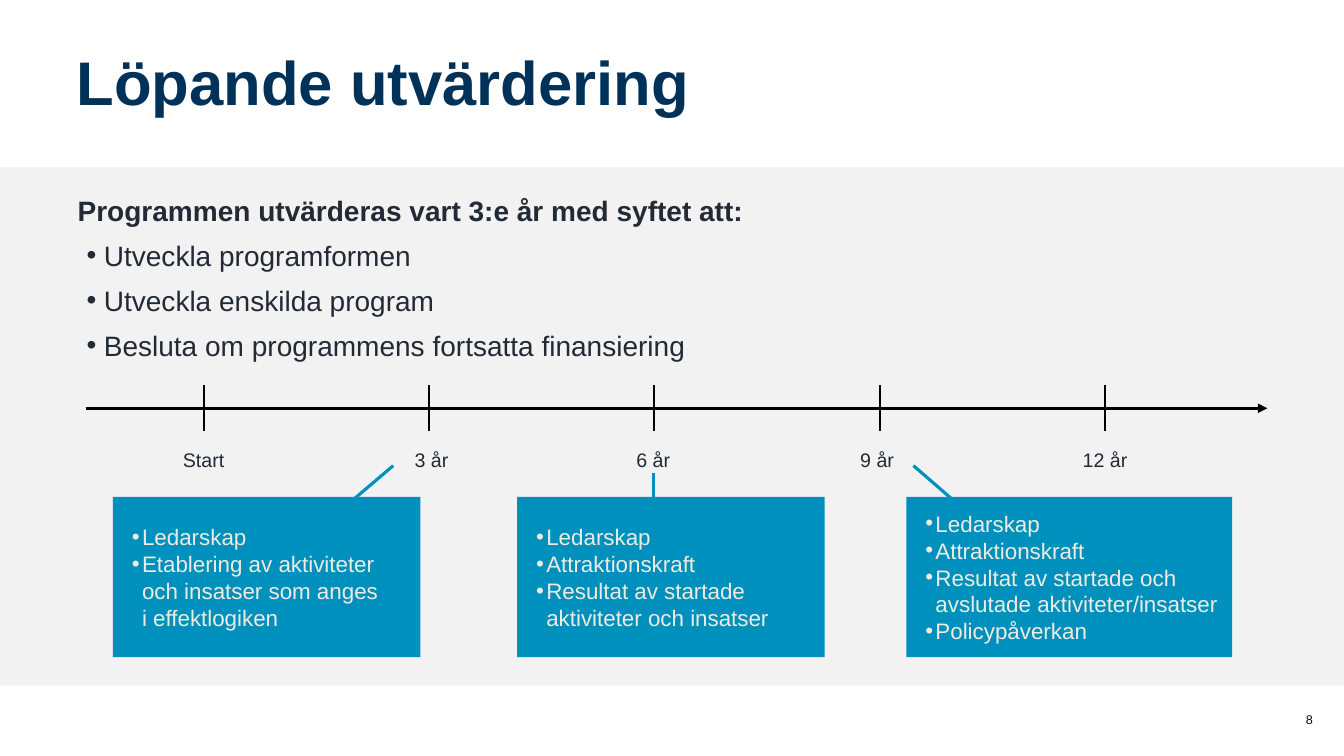
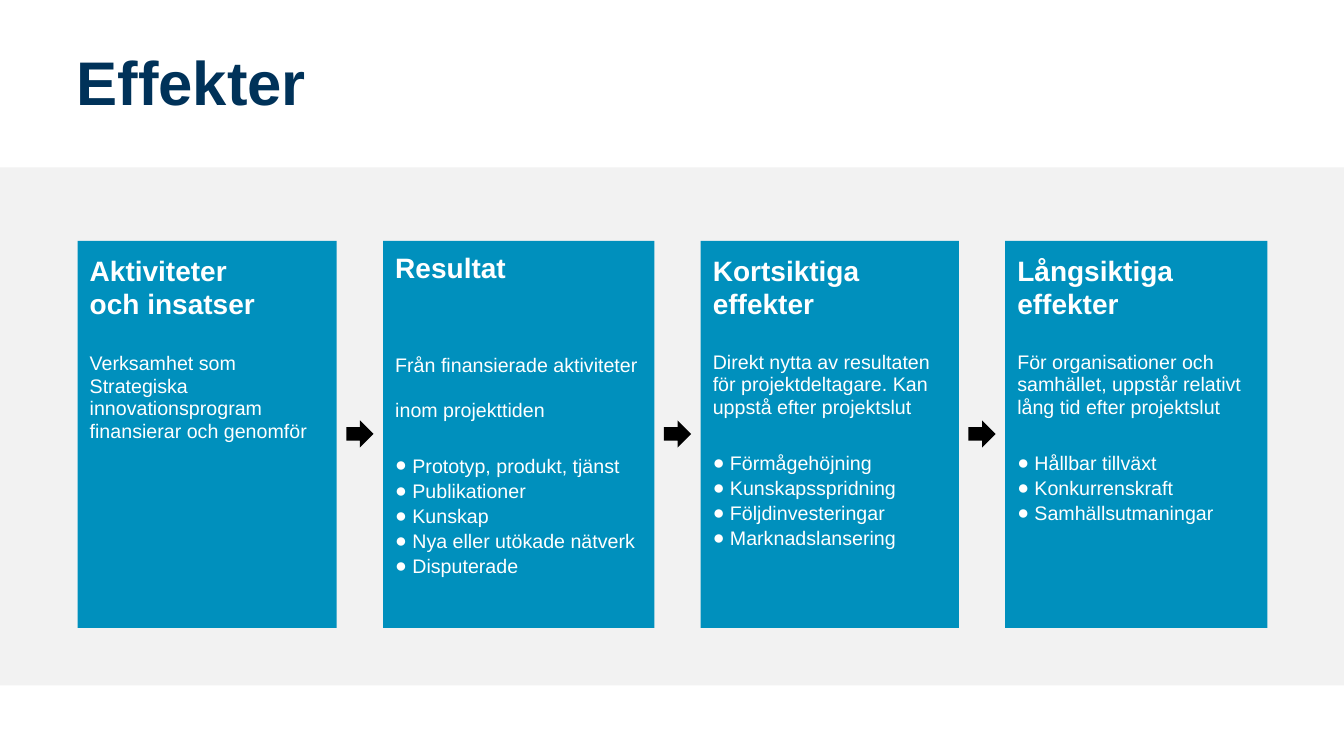
from lxml.etree import SubElement
from pptx import Presentation
from pptx.dml.color import RGBColor
from pptx.enum.shapes import MSO_CONNECTOR as Connector
from pptx.enum.shapes import MSO_SHAPE as Preset
from pptx.enum.shapes import PP_PLACEHOLDER as Holder
from pptx.enum.text import MSO_ANCHOR as Anchor
from pptx.enum.text import MSO_AUTO_SIZE as AutoSize
from pptx.enum.text import PP_ALIGN as Align
from pptx.oxml.ns import qn
from pptx.util import Inches, Pt

# Shared colours and formats
NAVY, BLUE, GREY = "003259", "0090BD", "F2F2F2"
INK, CREAM, WHITE, BLACK = "222A35", "EEECE1", "FFFFFF", "000000"
NO_MARGINS = dict.fromkeys(
    ("margin_left", "margin_top", "margin_right", "margin_bottom"), 0)
CARD_MARGINS = {"margin_left": Inches(0.12), "margin_top": Inches(0.12),
                "margin_right": Inches(0.12), "margin_bottom": Inches(0.08)}

# Slide 1: the timeline and what is evaluated at each stage
PURPOSES = ["Utveckla programformen", "Utveckla enskilda program",
            "Besluta om programmens fortsatta finansiering"]
MILESTONES = [("Start", 2.02), ("3 år", 4.28), ("6 år", 6.48),
              ("9 år", 8.7), ("12 år", 10.96)]
FIRST_TICK, LAST_TICK, AXIS_Y, TICK_REACH = 2.02, 10.96, 4.05, 0.23
# left, width, pointer ends, topics
EVALUATIONS = [
    (1.12, 3.05, (3.23, 5.19, 3.9, 4.62),
     ["Ledarskap",
      "Etablering av aktiviteter och insatser som anges\vi effektlogiken"]),
    (5.13, 3.05, (6.48, 5.58, 6.48, 4.69),
     ["Ledarskap", "Attraktionskraft",
      "Resultat av startade aktiviteter och insatser"]),
    (8.99, 3.23, (9.74, 5.21, 9.06, 4.62),
     ["Ledarskap", "Attraktionskraft",
      "Resultat av startade och avslutade aktiviteter/insatser",
      "Policypåverkan"]),
]

# Slide 2: width, heading, heading line and gap in points, description, examples
EFFECT_STEPS = [
    (2.57, "Aktiviteter\voch insatser", 24, 23,
     ["Verksamhet som Strategiska innovationsprogram finansierar och genomför"],
     []),
    (2.69, "Resultat", 22, 50,
     ["Från finansierade aktiviteter", "inom projekttiden"],
     ["Prototyp, produkt, tjänst", "Publikationer", "Kunskap",
      "Nya eller utökade nätverk", "Disputerade"]),
    (2.56, "Kortsiktiga\veffekter", 24, 22,
     ["Direkt nytta av resultaten för projektdeltagare. "
      "Kan uppstå efter projektslut"],
     ["Förmågehöjning", "Kunskapsspridning", "Följdinvesteringar",
      "Marknadslansering"]),
    (2.6, "Långsiktiga\veffekter", 24, 22,
     ["För organisationer och samhället, uppstår relativt lång tid "
      "efter projektslut"],
     ["Hållbar tillväxt", "Konkurrenskraft", "Samhällsutmaningar"]),
]
CARDS_LEFT, CARDS_TOP, CARD_HEIGHT, CARD_GAP = 0.77, 2.39, 3.84, 0.46
ARROW_SIZE = 0.27


def apply(target, formats):
    for name, value in formats.items():
        setattr(target, name, value)


def paint(fill, color):
    fill.solid()
    fill.fore_color.rgb = RGBColor.from_string(color)


def place(shape, left, top, width, height):
    apply(shape, {"left": Inches(left), "top": Inches(top),
                  "width": Inches(width), "height": Inches(height)})


def set_bullet(paragraph, mark, indent, hanging):
    """Set the bullet and indents; without a mark the bullet is off."""
    properties = paragraph._p.get_or_add_pPr()
    properties.set("marL", str(Inches(indent)))
    properties.set("indent", str(-Inches(hanging)))
    if mark:
        SubElement(properties, qn("a:buFont"), typeface="Arial")
        SubElement(properties, qn("a:buChar"), char=mark)
    else:
        SubElement(properties, qn("a:buNone"))


def add_text(frame, text, size, color, bold=False, bullet=(None, 0, 0),
             align=Align.LEFT, line=1.0, after=0):
    """Fill the empty first paragraph of a frame, or add another one."""
    paragraph = frame.paragraphs[0]
    if paragraph.runs:
        paragraph = frame.add_paragraph()
    paragraph.text = text
    set_bullet(paragraph, *bullet)
    apply(paragraph, {"alignment": align, "line_spacing": line,
                      "space_before": Pt(0), "space_after": Pt(after)})
    for run in paragraph.runs:
        apply(run.font, {"name": "Arial", "size": Pt(size), "bold": bold})
        paint(run.font.fill, color)


def add_block(slide, preset, box, color):
    block = slide.shapes.add_shape(preset, *map(Inches, box))
    block.shadow.inherit = False
    paint(block.fill, color)
    block.line.fill.background()
    return block


def add_label(slide, box, text, size, color, align, **formats):
    frame = slide.shapes.add_textbox(*map(Inches, box)).text_frame
    apply(frame, {"word_wrap": True, **formats})
    add_text(frame, text, size, color, align=align)


def add_line(slide, ends, color, width, arrow=False):
    line = slide.shapes.add_connector(Connector.STRAIGHT, *map(Inches, ends))
    line.line.width = Pt(width)
    paint(line.line.fill, color)
    properties = line.element.spPr
    if arrow:
        SubElement(properties.find(qn("a:ln")), qn("a:tailEnd"),
                   type="triangle")
    SubElement(properties, qn("a:effectLst"))


def add_titled_slide(deck, layout, title):
    slide = deck.slides.add_slide(deck.slide_layouts[layout])
    add_text(slide.shapes.title.text_frame, title, 44, NAVY, bold=True,
             line=0.9)
    return slide


def style_master(deck, first_slide):
    """Give the master the grey band and the title position."""
    master = deck.slide_master
    band = add_block(first_slide, Preset.RECTANGLE, (0, 1.66, 13.33, 5.14),
                     GREY)
    master.shapes.element.insert(2, band.element)
    title = master.placeholders.get(Holder.TITLE)
    place(title, 0.76, 0.24, 11.18, 1.22)
    apply(title.text_frame, {**NO_MARGINS, "vertical_anchor": Anchor.MIDDLE,
                             "auto_size": AutoSize.NONE})


def add_purposes(slide):
    body = slide.placeholders[1]
    place(body, 0.67, 1.76, 7.48, 1.85)
    frame = body.text_frame
    frame.auto_size = AutoSize.NONE
    add_text(frame, "Programmen utvärderas vart 3:e år med syftet att:", 20,
             INK, bold=True, line=Pt(32))
    for purpose in PURPOSES:
        add_text(frame, purpose, 20, INK, bullet=("•", 0.26, 0.17),
                 line=Pt(32))


def add_timeline(slide):
    add_line(slide, (0.85, AXIS_Y, 12.57, AXIS_Y), BLACK, 2.25, arrow=True)
    step = (LAST_TICK - FIRST_TICK) / (len(MILESTONES) - 1)
    for index, (milestone, center) in enumerate(MILESTONES):
        tick = FIRST_TICK + index * step
        add_line(slide, (tick, AXIS_Y - TICK_REACH, tick, AXIS_Y + TICK_REACH),
                 BLACK, 1.5)
        add_label(slide, (center - 0.4, 4.39, 0.8, 0.34), milestone, 14, INK,
                  Align.CENTER)


def add_evaluation(slide, left, width, pointer, topics):
    add_line(slide, pointer, BLUE, 2.25)
    box = add_block(slide, Preset.RECTANGLE, (left, 4.93, width, 1.59), BLUE)
    box.text_frame.vertical_anchor = Anchor.MIDDLE
    for topic in topics:
        add_text(box.text_frame, topic, 16, CREAM, bullet=("•", 0.19, 0.1),
                 line=Pt(19.2))


def add_effect_card(slide, left, width, heading, heading_line, heading_gap,
                    description, examples):
    card = add_block(slide, Preset.RECTANGLE,
                     (left, CARDS_TOP, width, CARD_HEIGHT), BLUE)
    frame = card.text_frame
    apply(frame, {**CARD_MARGINS, "vertical_anchor": Anchor.TOP})
    add_text(frame, heading, 20, WHITE, bold=True, line=Pt(heading_line),
             after=heading_gap)
    for sentence in description:
        last = sentence == description[-1]
        add_text(frame, sentence, 14, WHITE, line=Pt(16),
                 after=22 if last else 16)
    for example in examples:
        add_text(frame, example, 14, WHITE, bullet=("●", 0.17, 0.17),
                 line=Pt(18))


def add_effect_chain(slide):
    left = CARDS_LEFT
    for index, (width, *content) in enumerate(EFFECT_STEPS):
        if index:
            arrow_left = left - (CARD_GAP + ARROW_SIZE) / 2
            add_block(slide, Preset.RIGHT_ARROW,
                      (arrow_left, 4.17, ARROW_SIZE, ARROW_SIZE), BLACK)
        add_effect_card(slide, left, width, *content)
        left += width + CARD_GAP


def main():
    deck = Presentation()
    apply(deck, {"slide_width": Inches(13.33), "slide_height": Inches(7.5)})

    # Slide 1: continuous evaluation
    evaluation = add_titled_slide(deck, 1, "Löpande utvärdering")
    style_master(deck, evaluation)
    add_purposes(evaluation)
    add_timeline(evaluation)
    for stage in EVALUATIONS:
        add_evaluation(evaluation, *stage)
    add_label(evaluation, (12.63, 7, 0.39, 0.21), "8", 9, "0D0D0D",
              Align.RIGHT, vertical_anchor=Anchor.BOTTOM, **NO_MARGINS)

    # Slide 2: chain of effects
    effects = add_titled_slide(deck, 5, "Effekter")
    add_effect_chain(effects)

    deck.save("out.pptx")


if __name__ == "__main__":
    main()
